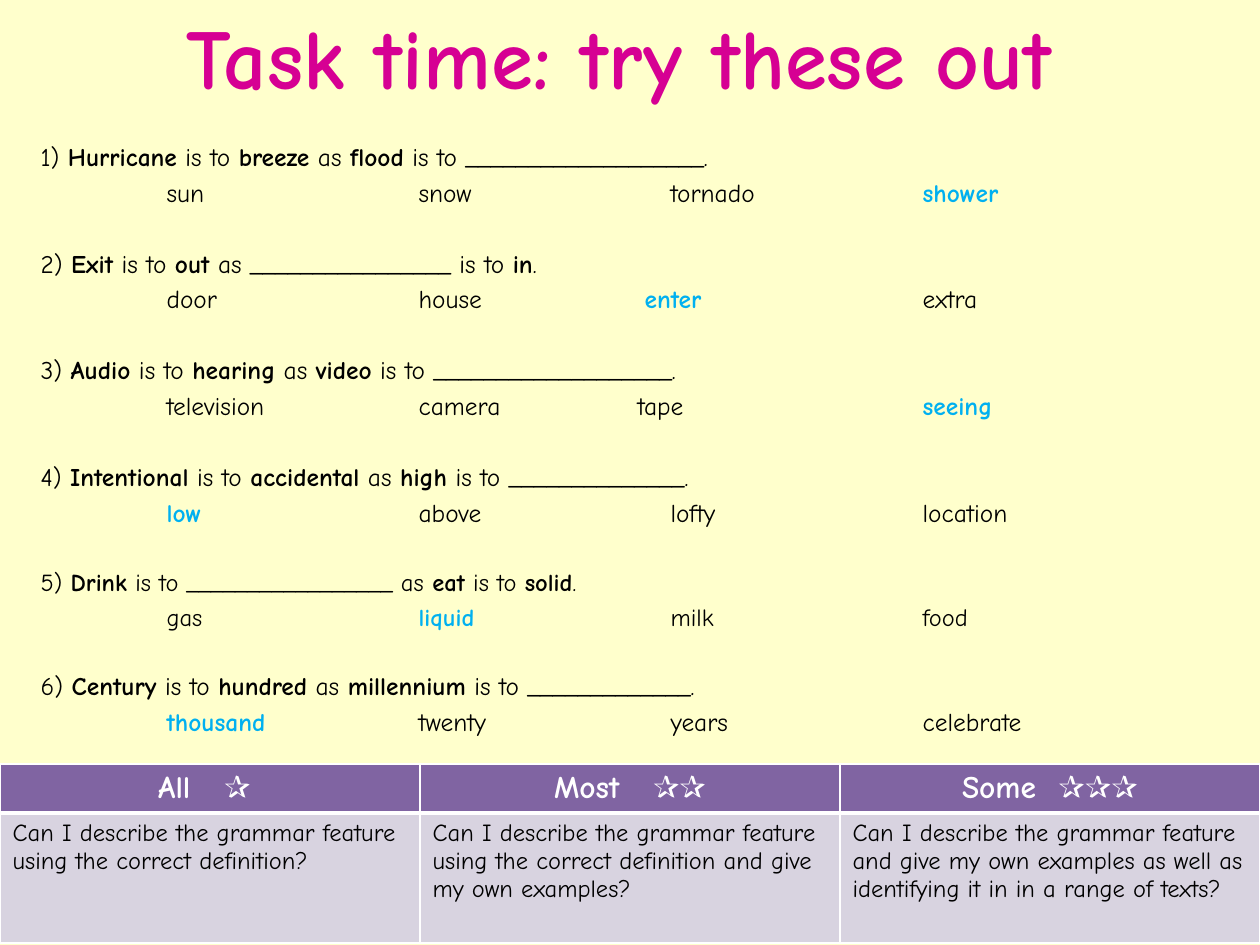
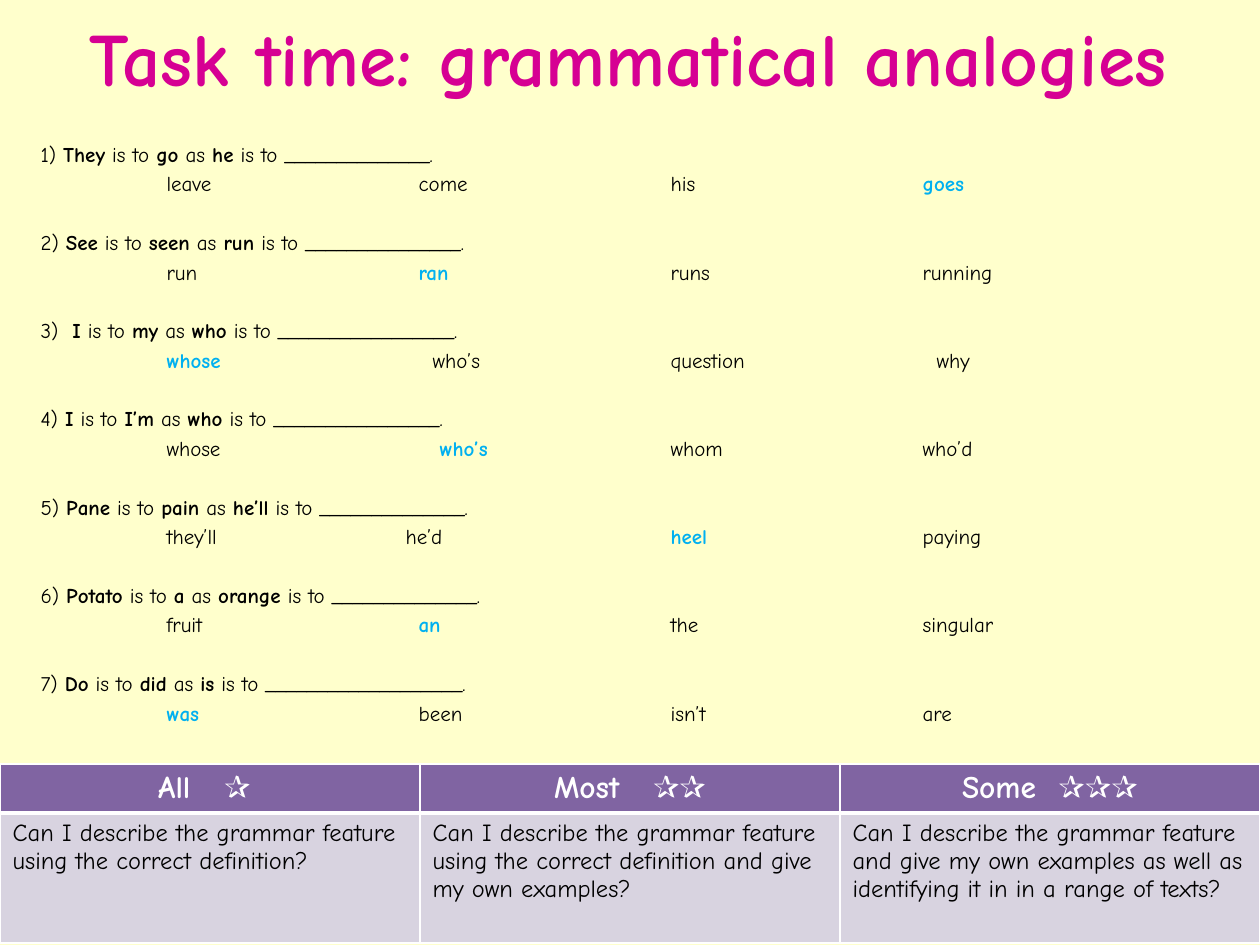
from pptx import Presentation
from pptx.dml.color import RGBColor as Rgb
from pptx.enum.text import MSO_ANCHOR as Anchor, MSO_AUTO_SIZE as AutoSize, PP_ALIGN as Align
from pptx.oxml.ns import qn
from pptx.util import Emu, Pt
from lxml.etree import SubElement

# Content: *stars* mark bold words in questions and the answer among the options;
# an option given as (word, shift) sits that many px off its column
SLIDES = [
    dict(
        title="Task time: try these out", title_size=48.6, title_box=(-19, -4, 1275, 120),
        questions=[
            (14.5, "1) *Hurricane* is to *breeze* as *flood* is to ___________________.",
             ["sun", "snow", "tornado", "*shower*"]),
            (14.5, "2) *Exit* is to *out* as ________________ is to *in*.",
             ["door", "house", ("*enter*", -26), "extra"]),
            (14.5, "3) *Audio* is to *hearing* as *video* is to ___________________.",
             ["television", "camera", ("tape", -33), "*seeing*"]),
            (14.5, "4) *Intentional* is to *accidental* as *high* is to ______________.",
             ["*low*", "above", "lofty", "location"]),
            (14, "5) *Drink* is to _________________ as *eat* is to *solid*.",
             ["gas", "*liquid*", "milk", "food"]),
            (14.5, "6) *Century* is to *hundred* as *millennium* is to _____________.",
             ["*thousand*", "twenty", "years", "celebrate"]),
        ],
    ),
    dict(
        title="Task time: grammatical analogies", title_size=43, title_box=(0, -4, 1256, 120),
        questions=[
            (12, "1) *They* is to *go* as *he* is to ______________.",
             ["leave", "come", "his", "*goes*"]),
            (12, "2) *See* is to *seen* as *run* is to _______________.",
             ["run", "*ran*", "runs", "running"]),
            (12, "3)  *I* is to *my* as *who* is to _________________.",
             ["*whose*", ("who’s", 14), "question", ("why", 14)]),
            (12, "4) *I* is to *I’m* as *who* is to ________________.",
             ["whose", ("*who’s*", 21), "whom", "who’d"]),
            (12, "5) *Pane* is to *pain* as *he’ll* is to ______________.",
             ["they’ll", ("he’d", -13), "*heel*", "paying"]),
            (12, "6) *Potato* is to *a* as *orange* is to ______________.",
             ["fruit", "*an*", "the", "singular"]),
            (12, "7) *Do* is to *did* as *is* is to ___________________.",
             ["*was*", "been", "isn’t", "are"]),
        ],
    ),
]
GOALS = [
    ("All   ✰ ", "Can I describe the grammar feature using the correct definition?"),
    ("Most   ✰✰", "Can I describe the grammar feature using the correct definition "
                  "and give my own examples?"),
    ("Some  ✰✰✰", "Can I describe the grammar feature and give my own examples "
                  "as well as identifying it in in a range of texts?"),
]

# Shared look
COLOURS = dict(page="FFFFCC", title="D60093", text="000000", answer="00B0F0",
               header="8064A2", goal="D8D3E0", white="FFFFFF")
FONT = "Comic Neue"
PAGE = (1260, 945)
BODY_BOX = (28, 135, 1231, 648)
TABLE_BOX = (0, 764, 1260, 177)
ROW_HEIGHTS = (47, 130)
TAB_STEP = 126  # options start one step in, then every second step
LINE_PITCH, LINE_GAP = 1.38, 0.21  # multiples of the text size


def px(length):
    return Emu(round(length * 914400 / 126))


def colour(name):
    return Rgb.from_string(COLOURS[name])


def place(shape, box):
    for side, length in zip(("left", "top", "width", "height"), box):
        setattr(shape, side, px(length))


def add_span(para, text, size, tone, bold=False):
    span = para.add_run()
    span.text = text
    for key, value in dict(name=FONT, size=Pt(size), bold=bold).items():
        setattr(span.font, key, value)
    span.font.color.rgb = colour(tone)


def add_marked(para, text, size, bold_tone):
    for index, part in enumerate(text.split("*")):
        if part:
            is_bold = index % 2 == 1
            add_span(para, part, size, bold_tone if is_bold else "text", is_bold)


def setup_frame(shape, anchor):
    settings = dict(word_wrap=True, auto_size=AutoSize.NONE, vertical_anchor=anchor)
    for key, value in settings.items():
        setattr(shape.text_frame, key, value)
    return shape.text_frame


def setup_master(master):
    fill = master.background.fill
    fill.solid()
    fill.fore_color.rgb = colour("page")
    # A first-line indent would override custom tab stops
    level = master.element.find(f".//{qn('p:bodyStyle')}/{qn('a:lvl1pPr')}")
    level.attrib.pop("indent", None)
    level.set("marL", "0")
    level.set("defTabSz", str(px(TAB_STEP)))


def format_line(para, space, stops=()):
    para.space_before = Pt(round(space, 1))
    props = para._p.get_or_add_pPr()
    props.set("marL", "0")
    props.set("defTabSz", str(px(TAB_STEP)))
    SubElement(props, qn("a:buNone"))
    if not stops:
        props.set("indent", "0")
        return
    tabs = SubElement(props, qn("a:tabLst"))
    for stop in stops:
        SubElement(tabs, qn("a:tab"), pos=str(px(stop)), algn="l")


def tab_stops(shifts):
    """Stops on the regular grid, moved where an option is shifted."""
    if not any(shifts):
        return []
    stops = [TAB_STEP * step for step in range(1, 2 * len(shifts))]
    for column, shift in enumerate(shifts):
        stops[2 * column] += shift
    return stops


def fill_title(shape, content):
    place(shape, content["title_box"])
    para = setup_frame(shape, Anchor.MIDDLE).paragraphs[0]
    para.alignment = Align.CENTER
    add_span(para, content["title"], content["title_size"], "title", True)


def fill_questions(shape, questions):
    place(shape, BODY_BOX)
    frame = setup_frame(shape, Anchor.TOP)
    para, previous_size = frame.paragraphs[0], 0
    for size, question, options in questions:
        if previous_size:
            para = frame.add_paragraph()
        format_line(para, LINE_GAP * size + LINE_PITCH * previous_size)
        add_marked(para, question, size, "text")

        # Options on the tab grid
        placed = [item if isinstance(item, tuple) else (item, 0) for item in options]
        para = frame.add_paragraph()
        format_line(para, LINE_GAP * size, tab_stops([shift for _, shift in placed]))
        for column, (word, _) in enumerate(placed):
            add_marked(para, ("\t\t" if column else "\t") + word, size, "answer")
        previous_size = size


def set_borders(cell, widths):
    props = cell._tc.get_or_add_tcPr()
    for index, (side, width) in enumerate(zip("LRTB", widths)):
        line = SubElement(props, qn(f"a:ln{side}"), w=str(Pt(width)))
        SubElement(SubElement(line, qn("a:solidFill")), qn("a:srgbClr"), val=COLOURS["white"])
        props.remove(line)
        props.insert(index, line)  # borders come before the fill


def add_goals(slide):
    table = slide.shapes.add_table(2, len(GOALS), *map(px, TABLE_BOX)).table
    for row, height in zip(table.rows, ROW_HEIGHTS):
        row.height = px(height)
    row_styles = [
        dict(fill="header", size=18, tone="white", bold=True,
             align=Align.CENTER, borders=(1, 1, 1, 3)),
        dict(fill="goal", size=14, tone="text", bold=False,
             align=Align.LEFT, borders=(1, 1, 3, 1)),
    ]
    for column, texts in enumerate(GOALS):
        table.columns[column].width = px(PAGE[0] / len(GOALS))
        for row, (text, style) in enumerate(zip(texts, row_styles)):
            cell = table.cell(row, column)
            cell.fill.solid()
            cell.fill.fore_color.rgb = colour(style["fill"])
            set_borders(cell, style["borders"])
            para = cell.text_frame.paragraphs[0]
            para.alignment = style["align"]
            add_span(para, text, style["size"], style["tone"], style["bold"])


def main():
    deck = Presentation()
    deck.slide_width, deck.slide_height = map(px, PAGE)
    setup_master(deck.slide_master)
    for content in SLIDES:
        slide = deck.slides.add_slide(deck.slide_layouts[1])
        fill_title(slide.shapes.title, content)
        fill_questions(slide.placeholders[1], content["questions"])
        add_goals(slide)
    deck.save("out.pptx")


if __name__ == "__main__":
    main()
